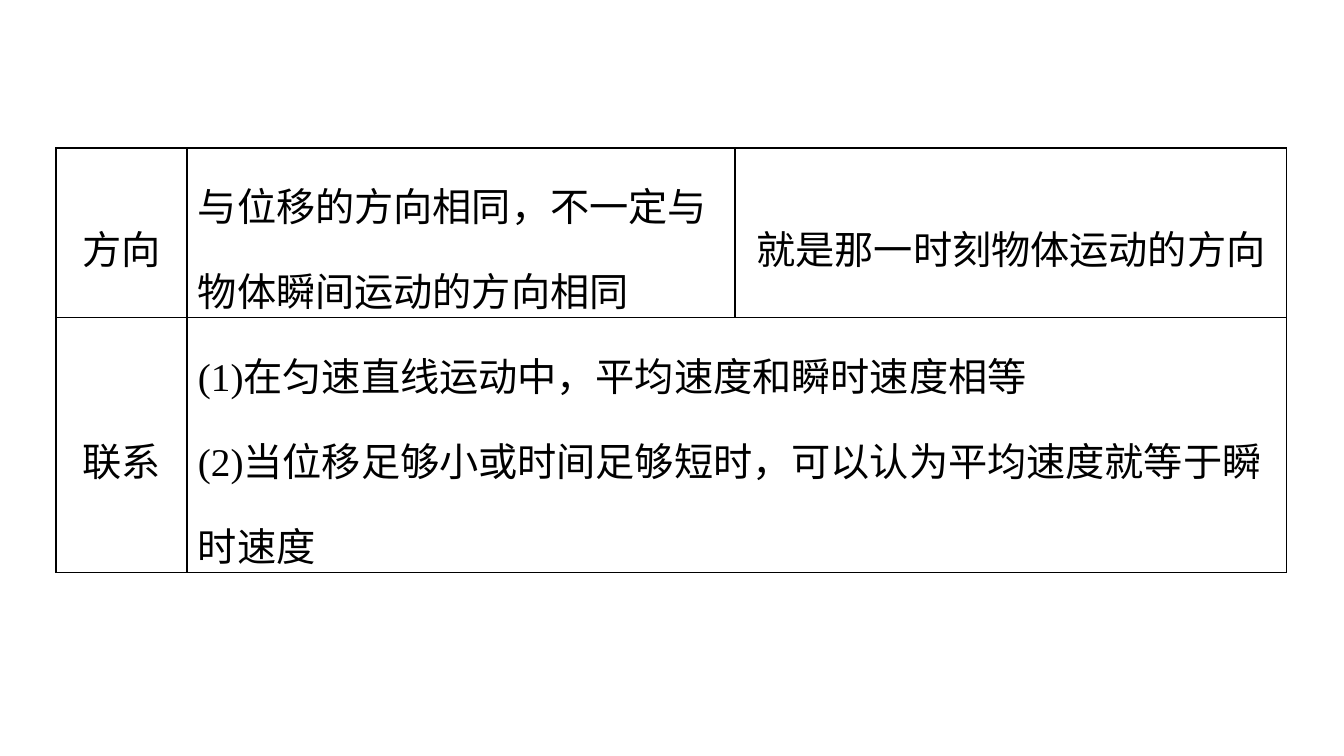
from dataclasses import dataclass
from lxml import etree
from pptx import Presentation
from pptx.dml.color import RGBColor
from pptx.enum.text import MSO_ANCHOR, PP_ALIGN
from pptx.oxml.ns import qn
from pptx.util import Emu, Pt

LEFT, CENTER = PP_ALIGN.LEFT, PP_ALIGN.CENTER
MIDDLE = MSO_ANCHOR.MIDDLE

# Content: each cell is a list of paragraphs
ROWS = [
    [["方向"], ["与位移的方向相同，不一定与物体瞬间运动的方向相同"],
     ["就是那一时刻物体运动的方向"]],
    [["联系"], ["(1)在匀速直线运动中，平均速度和瞬时速度相等",
               "(2)当位移足够小或时间足够短时，可以认为平均速度就等于瞬时速度"]],
]

# Layout in px
SLIDE = (1344, 756)
ORIGIN = (56, 148)
COLS = (131, 548, 552)
HEIGHTS = (155, 234)
PAD, INDENT = 3, 8


@dataclass
class Theme:
    ink: str = "000000"
    font: str = "Times New Roman"
    size: int = 28
    lead: float = 1.5
    rule: int = 1


THEME = Theme()


def px(n):
    return Emu(round(n * 914400 / 100.8))


def write(frame, lines, align=LEFT, indent=0):
    for i, line in enumerate(lines):
        para = frame.paragraphs[0] if i == 0 else frame.add_paragraph()
        para.alignment, para.line_spacing = align, THEME.lead
        if indent:
            props = para._p.get_or_add_pPr()
            props.set("marL", str(px(indent)))
            props.set("indent", "0")
        run = para.add_run()
        run.text = line
        run.font.name, run.font.size = THEME.font, Pt(THEME.size)
        run.font.color.rgb = RGBColor.from_string(THEME.ink)


def border(cell):
    props = cell._tc.get_or_add_tcPr()
    for i, side in enumerate("LRTB"):
        line = etree.Element(qn("a:ln" + side), w=str(Pt(THEME.rule)))
        fill = etree.SubElement(line, qn("a:solidFill"))
        etree.SubElement(fill, qn("a:srgbClr"), val=THEME.ink)
        props.insert(i, line)


def main():
    deck = Presentation()
    deck.slide_width, deck.slide_height = map(px, SLIDE)
    slide = deck.slides.add_slide(deck.slide_layouts[6])

    # Table grid
    box = [px(n) for n in (*ORIGIN, sum(COLS), sum(HEIGHTS))]
    table = slide.shapes.add_table(len(ROWS), len(COLS), *box).table
    table.first_row = table.horz_banding = False
    for col, width in zip(table.columns, COLS):
        col.width = px(width)
    for row, height in zip(table.rows, HEIGHTS):
        row.height = px(height)

    # Cell style
    for cell in table.iter_cells():
        cell.fill.background()
        cell.vertical_anchor = MIDDLE
        cell.margin_left = cell.margin_right = px(PAD)
        cell.margin_top = cell.margin_bottom = 0
        border(cell)

    # Cell text: a short row spans to the right edge
    for r, row in enumerate(ROWS):
        if len(row) < len(COLS):
            table.cell(r, len(row) - 1).merge(table.cell(r, len(COLS) - 1))
        for c, lines in enumerate(row):
            look = {"indent": INDENT} if c == 1 else {"align": CENTER}
            write(table.cell(r, c).text_frame, lines, **look)

    deck.save("out.pptx")


if __name__ == "__main__":
    main()
